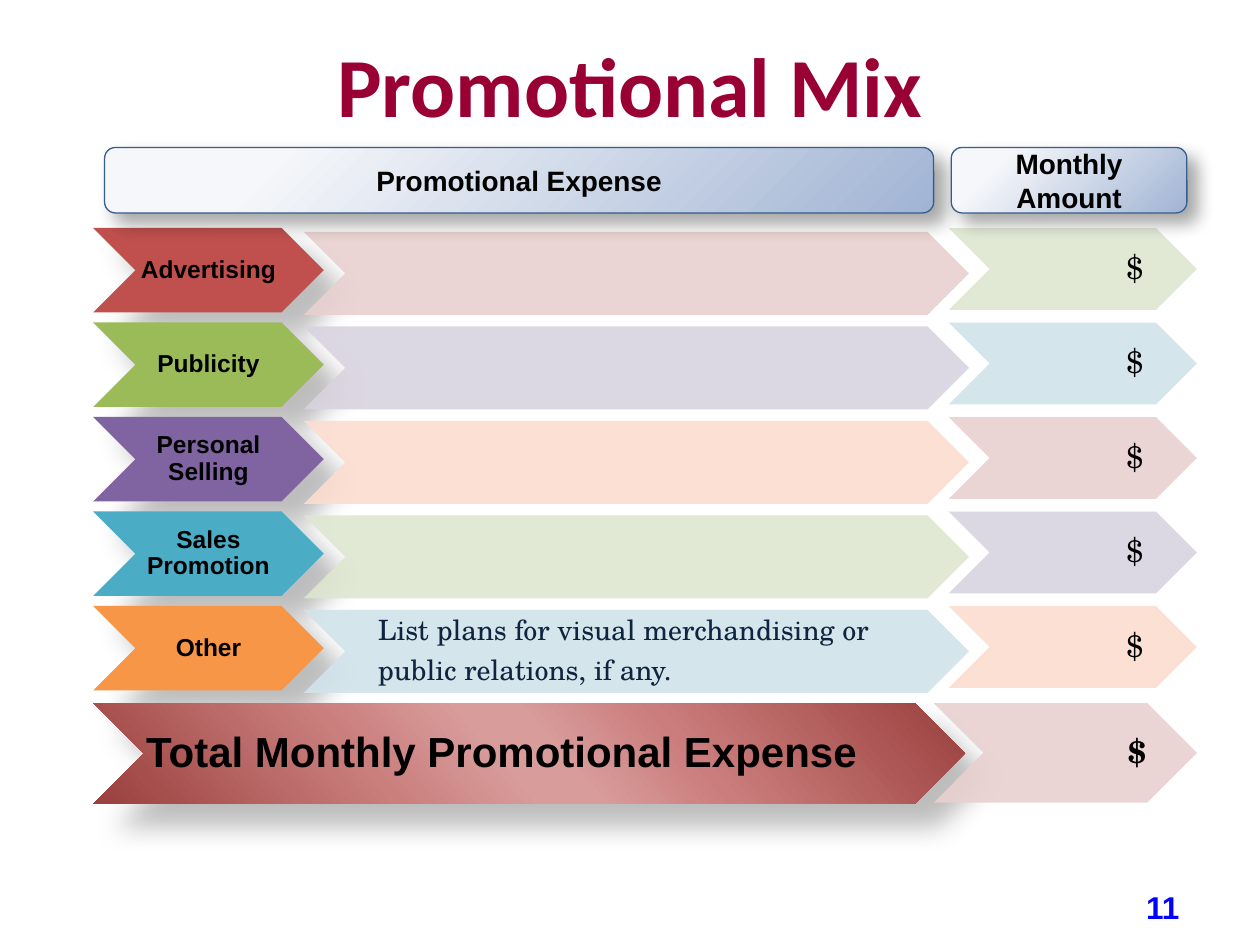
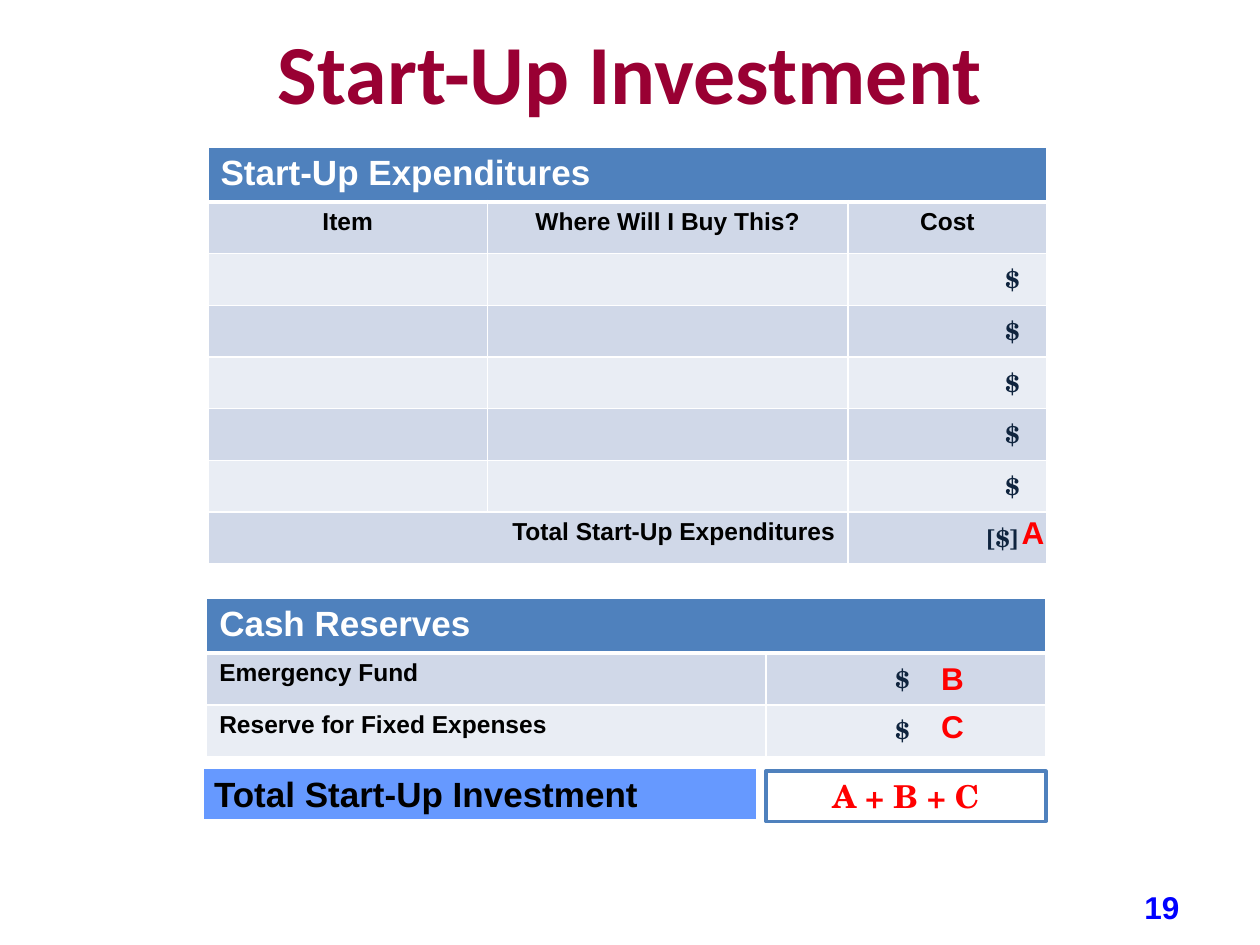
from lxml import etree
from pptx import Presentation
from pptx.dml.color import RGBColor
from pptx.enum.shapes import MSO_SHAPE as SHAPE
from pptx.enum.text import MSO_ANCHOR as ANCHOR, PP_ALIGN as ALIGN
from pptx.oxml import parse_xml
from pptx.oxml.ns import nsdecls, qn
from pptx.util import Inches, Pt

BLACK, WHITE, NAVY, RED = "000000", "FFFFFF", "0F243E", "FF0000"
MAROON, PAGE_BLUE, BLUE = "990033", "0000FF", "4F81BD"
DARK_BAND, LIGHT_BAND, TOTAL_BLUE = "D0D8E8", "E9EDF4", "6699FF"
TINTS = {"red": "E8D0D0", "green": "DEE7D1", "purple": "D8D3E0",
         "teal": "D0E3EA", "orange": "FCDDCF"}
SERIF = "TeX Gyre Schola"
LABEL = dict(size=14, color=BLACK)
HEADING = dict(size=20, color=WHITE)
CASH = dict(size=14, color=NAVY, name=SERIF)
MARK = dict(size=18, color=RED)
LABEL_SHADOW = (26, 15, 18)
HEADER_SHADOW = (35, 10.2, 8)
HEADER_STOPS = [(20, "F5F7FA"), (100, "A1B4D4")]
TOTAL_STOPS = [(0, "9A403E"), (33, "CA7D7C"), (47, "D89C9B"),
               (53, "D89C9B"), (68, "CA7F7D"), (100, "9A403E")]
DIAGONAL = '<a:lin ang="8340000" scaled="0"/>'
CORNER = ('<a:path path="circle"><a:fillToRect l="-15000" t="-15000" '
          'r="115000" b="115000"/></a:path>')
NOTE = ["List plans for visual merchandising or", "public relations, if any."]
PROMOTIONS = [("Advertising", "C0504D", "red", "green", []),
              ("Publicity", "9BBB59", "purple", "teal", []),
              ("Personal Selling", "8064A2", "orange", "red", []),
              ("Sales Promotion", "4BACC6", "green", "purple", []),
              ("Other", "F79646", "teal", "orange", NOTE)]


def rgb(value):
    return RGBColor.from_string(value)


def write(tf, lines, size, color, name="Arial", bold=True, align=ALIGN.LEFT,
          spacing=None, gap=0):
    for i, line in enumerate(lines):
        p = tf.paragraphs[0] if i == 0 else tf.add_paragraph()
        p.alignment = align
        if spacing:
            p.line_spacing = spacing
        if i < len(lines) - 1:
            p.space_after = Pt(gap)
        r = p.add_run()
        r.text = line
        for key, value in dict(size=Pt(size), name=name, bold=bold).items():
            setattr(r.font, key, value)
        r.font.color.rgb = rgb(color)


def frame(sp, insets=(0.1, 0.05, 0.1, 0.05), wrap=True):
    tf = sp.text_frame
    left, top, right, bottom = map(Inches, insets)
    values = dict(margin_left=left, margin_top=top, margin_right=right,
                  margin_bottom=bottom, word_wrap=wrap, vertical_anchor=ANCHOR.MIDDLE)
    for key, value in values.items():
        setattr(tf, key, value)
    return tf


def text_box(s, box, text, insets=(0.1, 0.05, 0.1, 0.05), wrap=True, **fmt):
    sp = s.shapes.add_textbox(*map(Inches, box))
    write(frame(sp, insets, wrap), [text], **fmt)


def add_block(s, kind, box, fill, line=None, width=1, alpha=None):
    sp = s.shapes.add_shape(kind, *map(Inches, box))
    sp.shadow.inherit = False
    sp.fill.solid()
    sp.fill.fore_color.rgb = rgb(fill)
    if alpha:
        color = sp._element.spPr.find(qn("a:solidFill"))[0]
        etree.SubElement(color, qn("a:alpha"), val=str(alpha * 1000))
    if line:
        sp.line.color.rgb = rgb(line)
        sp.line.width = Pt(width)
    else:
        sp.line.fill.background()
    return sp


def add_gradient(sp, stops, direction):
    gs = "".join(f'<a:gs pos="{pos * 1000}"><a:srgbClr val="{color}"/></a:gs>'
                 for pos, color in stops)
    solid = sp._element.spPr.find(qn("a:solidFill"))
    solid.getparent().replace(solid, parse_xml(
        f'<a:gradFill {nsdecls("a")} rotWithShape="1"><a:gsLst>{gs}</a:gsLst>'
        f'{direction}</a:gradFill>'))


def add_shadow(sp, alpha, blur, dist):
    effects = sp._element.spPr.find(qn("a:effectLst"))
    effects.append(parse_xml(
        f'<a:outerShdw {nsdecls("a")} blurRad="{Pt(blur)}" dist="{Pt(dist)}" '
        f'dir="2700000" rotWithShape="0"><a:srgbClr val="{BLACK}">'
        f'<a:alpha val="{alpha * 1000}"/></a:srgbClr></a:outerShdw>'))


def chevron(s, box, fill, alpha=None):
    return add_block(s, SHAPE.CHEVRON, box, fill, alpha=alpha)


def add_header(s, box, lines):
    sp = add_block(s, SHAPE.ROUNDED_RECTANGLE, box, DARK_BAND, "355D8D", 0.75)
    add_gradient(sp, HEADER_STOPS, CORNER)
    add_shadow(sp, *HEADER_SHADOW)
    write(frame(sp, wrap=False), lines, 16, BLACK, align=ALIGN.CENTER)


def add_amount(s, box, tint, right, bold=False):
    sp = chevron(s, box, TINTS[tint], 90)
    write(frame(sp, (0.01, 0.01, right, 0.01)), ["$"], 18, BLACK, SERIF, bold,
          ALIGN.RIGHT, 0.9)


def add_promotion(s, left, top, label, fill, band, amount, note):
    sp = chevron(s, (left, top, 1.83, 0.67), fill)
    add_shadow(sp, *LABEL_SHADOW)
    write(frame(sp, (0.01,) * 4), [label], align=ALIGN.CENTER, spacing=0.9, **LABEL)
    sp = chevron(s, (left + 1.67, top + 0.03, 5.28, 0.66), TINTS[band], 90)
    write(frame(sp, (0.26, 0.01, 0.01, 0.01)), note, 16, NAVY, SERIF, False,
          spacing=0.9, gap=5.6)
    add_amount(s, (left + 6.79, top, 1.97, 0.65), amount, 0.1)


def add_total_row(s, left, top):
    sp = chevron(s, (left, top, 6.92, 0.8), "CA7D7C")
    add_gradient(sp, TOTAL_STOPS, DIAGONAL)
    add_shadow(sp, *LABEL_SHADOW)
    write(frame(sp, (0.02,) * 4), ["Total Monthly Promotional Expense"], 24, BLACK,
          spacing=0.9)
    add_amount(s, (left + 6.67, top, 2.09, 0.79), "red", 0.01, True)


def set_borders(cell, bottom):
    tcPr = cell._tc.get_or_add_tcPr()
    for i, (side, width) in enumerate([("L", 1), ("R", 1), ("T", 1), ("B", bottom)]):
        tcPr.insert(i, parse_xml(
            f'<a:ln{side} {nsdecls("a")} w="{Pt(width)}"><a:solidFill>'
            f'<a:srgbClr val="{WHITE}"/></a:solidFill></a:ln{side}>'))


def add_table(s, left, top, widths, heights):
    box = map(Inches, (left, top, sum(widths), sum(heights)))
    table = s.shapes.add_table(len(heights), len(widths), *box).table
    for col, width in zip(table.columns, widths):
        col.width = Inches(width)
    for i, (row, height) in enumerate(zip(table.rows, heights)):
        row.height = Inches(height)
        for cell in row.cells:
            cell.fill.solid()
            fill = BLUE if i == 0 else DARK_BAND if i % 2 else LIGHT_BAND
            cell.fill.fore_color.rgb = rgb(fill)
            set_borders(cell, 3 if i == 0 else 1)
    table.cell(0, 0).merge(table.cell(0, len(widths) - 1))
    return table


def put(table, row, col, text, **fmt):
    write(table.cell(row, col).text_frame, [text], **fmt)


def add_expenditures(s, left, top):
    table = add_table(s, left, top, [2.22, 2.86, 1.58], [0.41] * 8)
    put(table, 0, 0, "Start-Up Expenditures", **HEADING)
    for col, text in enumerate(["Item", "Where Will I Buy This?", "Cost"]):
        put(table, 1, col, text, align=ALIGN.CENTER, **LABEL)
    for row in range(2, 8):
        table.cell(row, 2).margin_right = Inches(0.22)
        put(table, row, 2, "[$]" if row == 7 else "$", align=ALIGN.RIGHT, **CASH)
    table.cell(7, 0).merge(table.cell(7, 1))
    put(table, 7, 0, "Total Start-Up Expenditures", align=ALIGN.RIGHT, **LABEL)
    text_box(s, (left + 6.36, top + 2.85, 0.33, 0.4), "A", wrap=False, **MARK)


def add_reserves(s, left, top):
    table = add_table(s, left, top, [4.44, 2.22], [0.43, 0.41, 0.41])
    put(table, 0, 0, "Cash Reserves", **HEADING)
    rows = [("Emergency Fund", "B"), ("Reserve for Fixed Expenses", "C")]
    for i, (text, mark) in enumerate(rows):
        put(table, i + 1, 0, text, **LABEL)
        put(table, i + 1, 1, "$ ", align=ALIGN.CENTER, **CASH)
        text_box(s, (left + 5.73, top + 0.43 + 0.38 * i, 0.38, 0.4), mark,
                 wrap=False, **MARK)


def add_investment_total(s, left, top):
    sp = add_block(s, SHAPE.RECTANGLE, (left + 4.48, top + 0.04, 2.22, 0.4),
                   WHITE, BLUE, 2)
    write(frame(sp), ["A + B + C"], name=SERIF, align=ALIGN.CENTER, **MARK)
    sp = add_block(s, SHAPE.RECTANGLE, (left, top, 4.42, 0.44), TOTAL_BLUE, WHITE, 3)
    write(frame(sp), ["Total Start-Up Investment"], 20, BLACK)


def new_slide(prs, title, top, height, number):
    s = prs.slides.add_slide(prs.slide_layouts[6])
    text_box(s, (8.94, 7.08, 0.42, 0.23), number, (0, 0.05, 0, 0.05),
             size=18, color=PAGE_BLUE, align=ALIGN.RIGHT)
    text_box(s, (0.5, top, 9, height), title, size=48, color=MAROON,
             name="Calibri", align=ALIGN.CENTER)
    return s


def promotional_mix(prs):
    s = new_slide(prs, "Promotional Mix", 0.17, 1, "11")
    for i, promotion in enumerate(PROMOTIONS):
        add_promotion(s, 0.74, 1.81 + 0.75 * i, *promotion)
    add_total_row(s, 0.74, 5.58)
    add_header(s, (0.83, 1.17, 6.58, 0.52), ["Promotional Expense"])
    add_header(s, (7.55, 1.17, 1.87, 0.52), ["Monthly", "Amount"])


def startup_investment(prs):
    s = new_slide(prs, "Start-Up Investment", 0.12, 0.88, "19")
    add_expenditures(s, 1.65, 1.17)
    add_reserves(s, 1.64, 4.75)
    add_investment_total(s, 1.6, 6.08)


def main():
    prs = Presentation()
    prs.slide_width, prs.slide_height = Inches(10), Inches(7.5)
    promotional_mix(prs)
    startup_investment(prs)
    prs.save("out.pptx")


if __name__ == "__main__":
    main()
